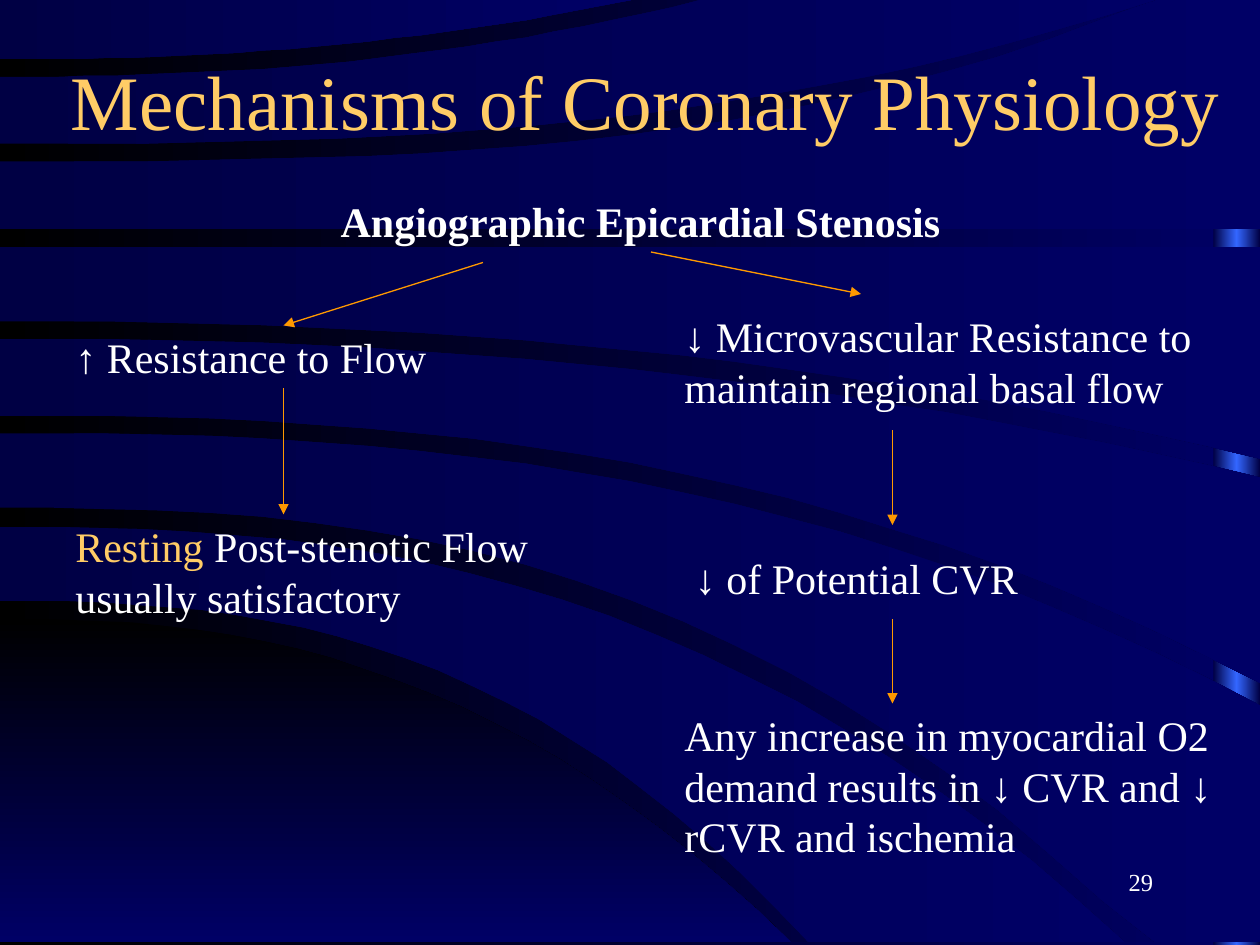
"""Build the slide on the mechanisms of coronary physiology."""
from copy import deepcopy
from dataclasses import dataclass

from lxml.etree import SubElement
from pptx import Presentation
from pptx.dml.color import RGBColor as RGB
from pptx.enum.shapes import MSO_CONNECTOR as Conn, MSO_SHAPE as Shape
from pptx.enum.text import MSO_ANCHOR as Anchor, PP_ALIGN as Align
from pptx.oxml.ns import qn
from pptx.util import Inches, Pt

CELL = Inches(1) / 12
FINE = Inches(0.01)
STEPS = 24
BOTTOM = 748


@dataclass(frozen=True)
class Theme:
    font: str = "Times New Roman"
    black: str = "000000"
    navy: str = "000044"
    blue: str = "000066"
    shine: str = "3366FF"
    gold: str = "FFCC66"
    white: str = "FFFFFF"
    arrow: str = "FF9900"
    title: int = 44
    body: int = 24
    number: int = 14
    line: float = 0.75


T = Theme()


@dataclass(frozen=True)
class Run:
    text: str
    color: str = T.white
    size: int = T.body
    bold: bool = False


@dataclass(frozen=True)
class Label:
    box: tuple[float, float, float, float]
    runs: tuple[Run, ...]
    align: Align = Align.LEFT


@dataclass(frozen=True)
class Arrow:
    start: tuple[float, float]
    end: tuple[float, float]


@dataclass(frozen=True)
class Edge:
    left_y: int
    right_y: int
    width: int = 1000
    power: float = 1

    def points(self) -> list[tuple[int, int]]:
        """Sample the power curve from left to right within the slide."""
        shares = [i / STEPS for i in range(STEPS + 1)]
        rise = self.right_y - self.left_y
        return [(round(self.width * t),
                 min(BOTTOM, max(0, round(self.left_y + rise * t ** self.power))))
                for t in shares]


@dataclass(frozen=True)
class Band:
    upper: Edge
    lower: Edge
    colors: tuple[str, str] = (T.navy, T.blue)
    angle: int = 0


BANDS = (
    Band(Edge(491, BOTTOM, 628, 2.4), Edge(BOTTOM, BOTTOM, 628), (T.black, T.blue), 270),
    Band(Edge(418, BOTTOM, 893, 2.5), Edge(477, BOTTOM, 642, 2.6)),
    Band(Edge(344, 560, power=2.5), Edge(403, 844, power=2.6)),
    Band(Edge(269, 379, power=2.2), Edge(330, 542, power=2.5)),
    Band(Edge(196, 196), Edge(255, 364, power=2.25)),
    Band(Edge(128, -40, power=3), Edge(182, 182)),
    Band(Edge(61, 0, 556, 2.3), Edge(114, 0, 917, 2.65)),
    Band(Edge(0, 0, 501), Edge(47, 0, 501, 2.2)),
)

TITLE = Label((3, 3, 117, 13),
              (Run("Mechanisms of Coronary Physiology", T.gold, T.title),), Align.CENTER)
LABELS = (
    Label((24, 18, 74, 6), (Run("Angiographic Epicardial Stenosis", bold=True),), Align.CENTER),
    Label((6, 31, 41, 6), (Run("↑ Resistance to Flow"),)),
    Label((64, 29, 52, 10.8),
          (Run("↓ Microvascular Resistance to maintain regional basal flow"),)),
    Label((65, 52, 55, 6), (Run("↓ of Potential CVR"),)),
    Label((6, 49, 48, 10.8),
          (Run("Resting", T.gold), Run(" Post-stenotic Flow usually satisfactory"))),
    Label((64, 67, 53, 15.6),
          (Run("Any increase in myocardial O2 demand results in ↓ CVR and ↓ rCVR and ischemia"),)),
    Label((86, 82, 25, 6), (Run("29", size=T.number),), Align.RIGHT),
)
ARROWS = (
    Arrow((46, 25), (27, 31)),
    Arrow((62, 24), (82, 28)),
    Arrow((85, 41), (85, 50)),
    Arrow((85, 59), (85, 67)),
    Arrow((27, 37), (27, 49)),
)


def cells(values: tuple[float, ...]) -> list[int]:
    """Turn grid columns and rows into lengths."""
    return [round(v * CELL) for v in values]


def set_gradient(fill, colors: tuple[str, ...], angle: int = 0) -> None:
    """Spread the colours evenly along a linear gradient."""
    fill.gradient()
    fill.gradient_angle = angle
    first = fill._fill._gradFill.find(qn("a:gsLst"))[0]
    for _ in colors[2:]:
        first.addnext(deepcopy(first))
    for i, (stop, color) in enumerate(zip(fill.gradient_stops, colors)):
        stop.position = i / (len(colors) - 1)
        stop.color.rgb = RGB.from_string(color)


def finish(sp, colors: tuple[str, ...], angle: int = 0) -> None:
    """Give a shape a gradient without outline or shadow."""
    set_gradient(sp.fill, colors, angle)
    sp.line.fill.background()
    sp.shadow.inherit = False


def draw_band(s, band: Band) -> None:
    """Draw a curved band between its upper and lower edges."""
    start, *rest = band.upper.points() + band.lower.points()[::-1]
    builder = s.shapes.build_freeform(*start, scale=FINE)
    builder.add_line_segments(rest, close=True)
    finish(builder.convert_to_shape(), band.colors, band.angle)


def write(sp, label: Label, anchor: Anchor) -> None:
    """Place a label and format its runs."""
    for name, value in zip(("left", "top", "width", "height"), cells(label.box)):
        setattr(sp, name, value)
    tf = sp.text_frame
    for name, value in {"word_wrap": True, "vertical_anchor": anchor}.items():
        setattr(tf, name, value)
    p = tf.paragraphs[0]
    p.alignment = label.align
    for run in label.runs:
        r = p.add_run()
        r.text = run.text
        for name, value in {"name": T.font, "size": Pt(run.size), "bold": run.bold}.items():
            setattr(r.font, name, value)
        r.font.color.rgb = RGB.from_string(run.color)


def draw_arrow(s, arrow: Arrow) -> None:
    """Draw a straight line with a triangular head."""
    c = s.shapes.add_connector(Conn.STRAIGHT, *cells(arrow.start + arrow.end))
    c.line.color.rgb = RGB.from_string(T.arrow)
    c.line.width = Pt(T.line)
    pr = c.element.spPr
    SubElement(pr.find(qn("a:ln")), qn("a:tailEnd"), type="triangle")
    SubElement(pr, qn("a:effectLst"))


def main() -> None:
    """Assemble and save the slide."""
    prs = Presentation()
    prs.slide_width, prs.slide_height = Inches(10), Inches(7.5)
    s = prs.slides.add_slide(prs.slide_layouts[5])
    set_gradient(s.background.fill, (T.black, T.blue))
    w, h = prs.slide_width, prs.slide_height
    strip = s.shapes.add_shape(Shape.RECTANGLE, round(w * 0.963), 0, round(w * 0.037), h)
    finish(strip, (T.navy, T.shine, T.navy))
    for band in BANDS:
        draw_band(s, band)
    title = s.shapes.title
    title.element.getparent().append(title.element)
    write(title, TITLE, Anchor.MIDDLE)
    for label in LABELS:
        write(s.shapes.add_textbox(*cells(label.box)), label, Anchor.TOP)
    for arrow in ARROWS:
        draw_arrow(s, arrow)
    prs.save("out.pptx")


if __name__ == "__main__":
    main()
